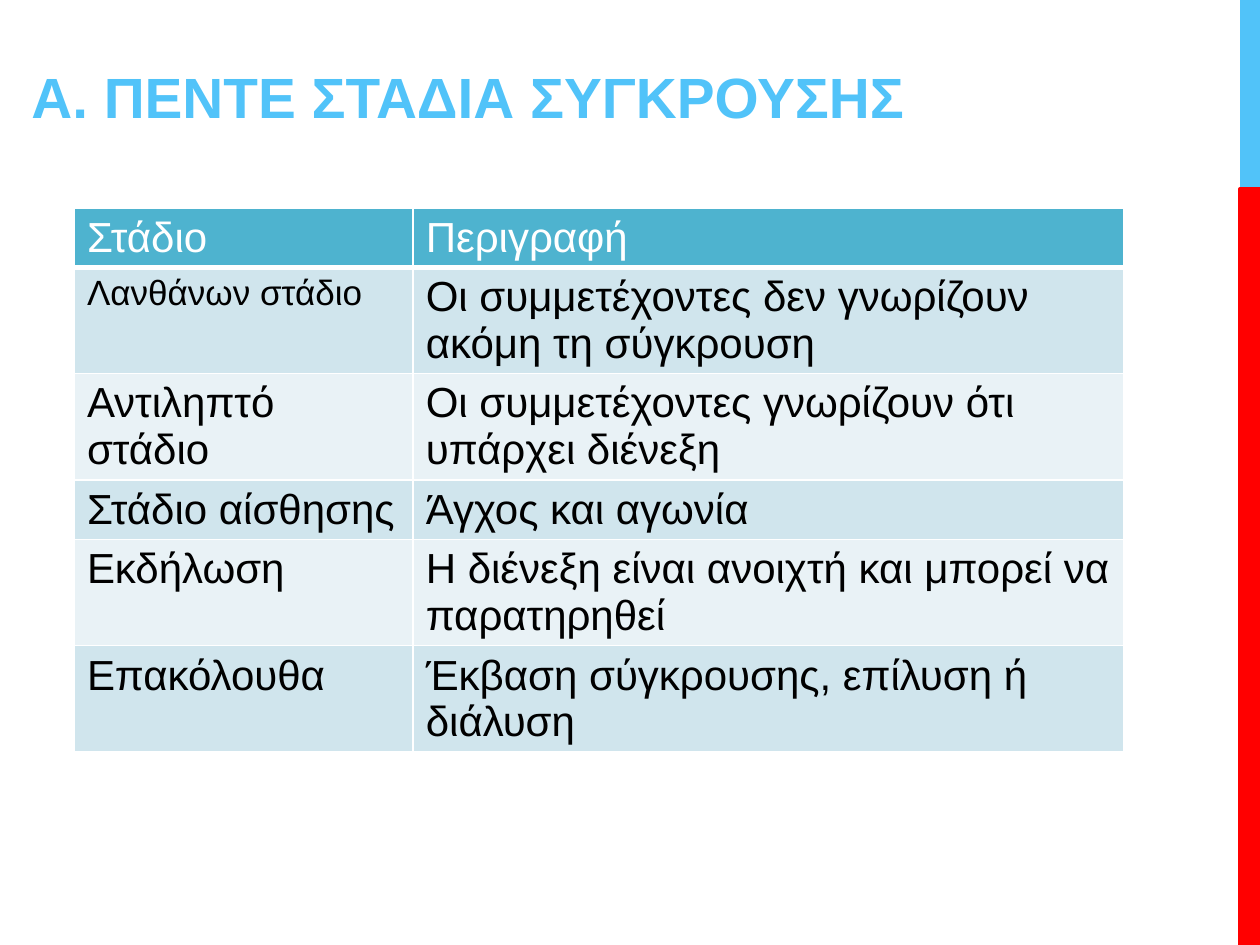
from lxml import etree
from pptx import Presentation
from pptx import util as u
from pptx.dml.color import RGBColor
from pptx.enum import shapes, text
from pptx.oxml.ns import qn

COLORS = {
    "sky": "51C3F9", "red": "FF0000", "header": "4EB3CF", "odd": "D0E5ED",
    "even": "E9F2F6", "white": "FFFFFF", "black": "000000",
}
ROWS = [
    ("Στάδιο", "Περιγραφή"),
    ("Λανθάνων στάδιο", "Οι συμμετέχοντες δεν γνωρίζουν ακόμη τη σύγκρουση"),
    ("Αντιληπτό στάδιο", "Οι συμμετέχοντες γνωρίζουν ότι υπάρχει διένεξη"),
    ("Στάδιο αίσθησης", "Άγχος και αγωνία"),
    ("Εκδήλωση", "Η διένεξη είναι ανοιχτή και μπορεί να παρατηρηθεί"),
    ("Επακόλουθα", "Έκβαση σύγκρουσης, επίλυση ή διάλυση"),
]


def format_text(para, size, color, bold=False):
    for span in para.runs:
        span.font.name = "Arial"
        span.font.size = u.Pt(size)
        span.font.bold = bold
        span.font.color.rgb = RGBColor.from_string(COLORS[color])


def add_borders(cell, bottom_width):
    """Draw white cell borders; call before the fill, which must follow them in the XML."""
    properties = cell._tc.get_or_add_tcPr()
    for side, width in (("L", 1), ("R", 1), ("T", 1), ("B", bottom_width)):
        line = etree.SubElement(properties, qn(f"a:ln{side}"), w=str(u.Pt(width)))
        fill = etree.SubElement(line, qn("a:solidFill"))
        etree.SubElement(fill, qn("a:srgbClr"), val=COLORS["white"])


deck = Presentation()
deck.slide_width, deck.slide_height = u.Cm(25.4), u.Cm(19.05)
page = deck.slides.add_slide(deck.slide_layouts[5])

# Side bands
for top, height, color in ((0, 3.81, "sky"), (3.81, 15.24, "red")):
    band = page.shapes.add_shape(
        shapes.MSO_SHAPE.RECTANGLE, u.Cm(25), u.Cm(top), u.Cm(0.4), u.Cm(height))
    band.shadow.inherit = False
    band.fill.solid()
    band.fill.fore_color.rgb = RGBColor.from_string(COLORS[color])
    if color == "red":
        band.line.color.rgb = RGBColor.from_string(COLORS[color])
        band.line.width = u.Pt(2.25)
    else:
        band.line.fill.background()

# Title
title = page.shapes.title
title.left, title.top, title.width, title.height = u.Cm(0.38), u.Cm(0.64), u.Cm(18.52), u.Cm(2.11)
frame = title.text_frame
frame.text = "A. ΠΕΝΤΕ ΣΤΑΔΙΑ ΣΥΓΚΡΟΥΣΗΣ"
frame.auto_size = text.MSO_AUTO_SIZE.NONE
frame.vertical_anchor = text.MSO_ANCHOR.BOTTOM
frame.paragraphs[0].alignment = text.PP_ALIGN.LEFT
format_text(frame.paragraphs[0], 32.4, "sky", bold=True)

# Table of stages
table = page.shapes.add_table(
    len(ROWS), 2, u.Cm(1.5), u.Cm(4.19), u.Cm(21.16), u.Cm(11.68)).table
table.columns[0].width, table.columns[1].width = u.Cm(6.83), u.Cm(14.33)
for r, row in enumerate(ROWS):
    table.rows[r].height = u.Cm(1.04)
    for c, words in enumerate(row):
        cell = table.cell(r, c)
        add_borders(cell, 3 if r == 0 else 1)
        background = "header" if r == 0 else "odd" if r % 2 else "even"
        cell.fill.solid()
        cell.fill.fore_color.rgb = RGBColor.from_string(COLORS[background])
        cell.text_frame.text = words
        format_text(cell.text_frame.paragraphs[0],
                    20 if (r, c) == (1, 0) else 24,
                    "white" if r == 0 else "black")

deck.save("out.pptx")
